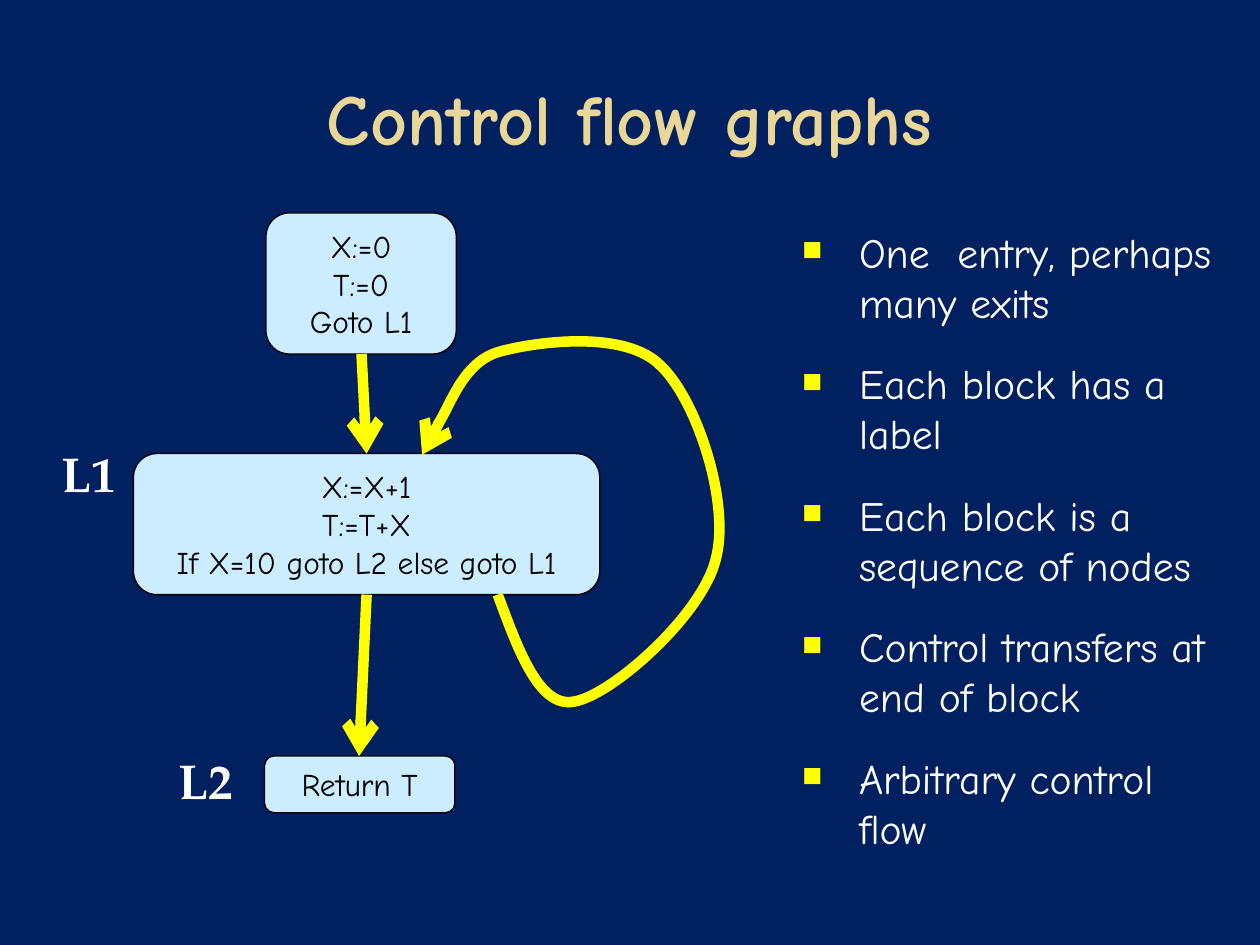
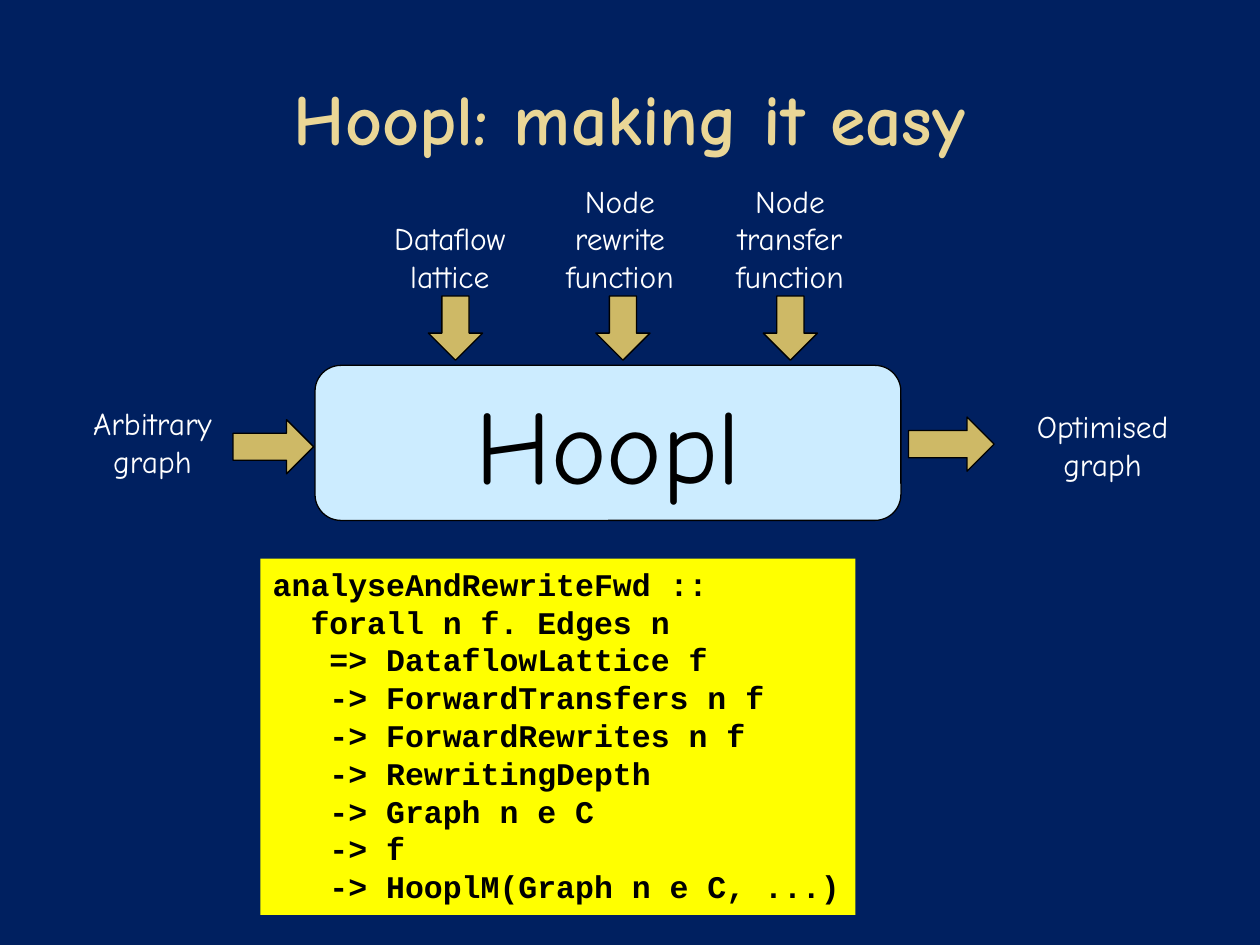
import pptx
import pptx.dml.color
import pptx.enum.shapes
import pptx.enum.text
import pptx.oxml.ns
import pptx.util
from lxml import etree

Pt = pptx.util.Pt
qn = pptx.oxml.ns.qn
SHAPE = pptx.enum.shapes.MSO_SHAPE
ALIGN = pptx.enum.text.PP_ALIGN
ANCHOR = pptx.enum.text.MSO_ANCHOR

COLORS = {"back": "002060", "title": "EAD696", "block": "CCECFF", "ink": "000000",
          "text": "FFFFFF", "bright": "FFFF00", "arrow": "CEB966"}
SANS, MONO, SERIF = "Comic Neue", "Courier New", "TeX Gyre Pagella"

FLOW_TITLE = "Control flow graphs"
FLOW_BLOCKS = [
    (["X:=0", "T:=0", "Goto L1"], (152, 121.7, 108.7, 80.6)),
    (["X:=X+1", "T:=T+X", "If X=10 goto L2 else goto L1"], (76.3, 259.2, 266.4, 80.6)),
    (["Return T"], (151.2, 432, 108.7, 32.4)),
]
FLOW_LABELS = [("L1", (28, 250, 46, 41)), ("L2", (95, 425.5, 46, 41))]
FLOW_ARROWS = [(206.6, 202.3, 209.5, 259.2), (209.5, 339.8, 205.2, 432)]
LOOP_START = (284.4, 339.8)
LOOP_CURVES = [
    [(295.2, 368.6), (307.4, 404.6), (327.6, 401)],
    [(348.5, 398.2), (401, 352.1), (409, 319.7)],
    [(417.6, 288), (398.2, 228.2), (377.3, 208.8)],
    [(357.1, 188.6), (307.4, 195.1), (285.8, 200.9)],
    [(264.2, 206.6), (256.3, 235.4), (249.1, 244.1)],
    [(242.6, 252), (242.6, 257.8), (241.2, 259.9)],
]
FLOW_POINTS = [
    "One  entry, perhaps many exits",
    "Each block has a label",
    "Each block is a sequence of nodes",
    "Control transfers at end of block",
    "Arbitrary control flow",
]

HOOPL_TITLE = "Hoopl: making it easy"
HOOPL_INPUTS = ["Dataflow lattice", "Node rewrite function", "Node transfer function"]
HOOPL_ENDS = [
    ("Arbitrary graph", (31.7, 227.5, 110.9, 51), (133.2, 239.8, 46, 31)),
    ("Optimised graph", (574.6, 229, 110.9, 51), (519.1, 238.3, 49, 31)),
]
SIGNATURE = [
    (0, "analyseAndRewriteFwd ::"),
    (2, "forall n f. Edges n"),
    (3, "=> DataflowLattice f"),
    (3, "-> ForwardTransfers n f"),
    (3, "-> ForwardRewrites n f"),
    (3, "-> RewritingDepth"),
    (3, "-> Graph n e C"),
    (3, "-> f"),
    (3, "-> HooplM(Graph n e C, ...)"),
]
CHAR_WIDTH = 10.8


def rgb(name):
    return pptx.dml.color.RGBColor.from_string(COLORS[name])


def write(sp, lines, size=18, font=SANS, color="text", bold=False, align=ALIGN.CENTER,
          anchor=ANCHOR.TOP, wrap=True, before=0, indents=None, bullet=None):
    tf = sp.text_frame
    tf.word_wrap = wrap
    tf.vertical_anchor = anchor
    for i, line in enumerate(lines):
        p = tf.paragraphs[0] if i == 0 else tf.add_paragraph()
        p.alignment = align
        p.space_before = Pt(before)
        r = p.add_run()
        r.text = line
        r.font.size, r.font.name, r.font.bold = Pt(size), font, bold
        r.font.color.rgb = rgb(color)
        pPr = p._p.get_or_add_pPr()
        if indents:
            pPr.set("marL", str(Pt(indents[i])))
        if bullet:
            pPr.set("indent", str(-Pt(32.4)))
            clr = etree.SubElement(pPr, qn("a:buClr"))
            etree.SubElement(clr, qn("a:srgbClr"), val=COLORS["bright"])
            etree.SubElement(pPr, qn("a:buSzPct"), val="80000")
            etree.SubElement(pPr, qn("a:buFont"), typeface=MONO)
            etree.SubElement(pPr, qn("a:buChar"), char=bullet)


def add_text(s, lines, box, **fmt):
    sp = s.shapes.add_textbox(*map(Pt, box))
    write(sp, lines, **fmt)


def add_shape(s, kind, box, fill, line="ink", rotation=0):
    sp = s.shapes.add_shape(kind, *map(Pt, box))
    sp.shadow.inherit = False
    sp.fill.solid()
    sp.fill.fore_color.rgb = rgb(fill)
    if line:
        sp.line.color.rgb = rgb(line)
        sp.line.width = Pt(0.75)
    else:
        sp.line.fill.background()
    sp.rotation = rotation
    return sp


def add_block(s, lines, box, size=18):
    sp = add_shape(s, SHAPE.ROUNDED_RECTANGLE, box, "block")
    write(sp, lines, size=size, color="ink", anchor=ANCHOR.MIDDLE, wrap=False)


def style_arrow(sp):
    sp.line.color.rgb = rgb("bright")
    sp.line.width = Pt(6)
    etree.SubElement(sp.line._get_or_add_ln(), qn("a:tailEnd"), type="arrow")


def add_arrow(s, x1, y1, x2, y2):
    sp = s.shapes.add_connector(pptx.enum.shapes.MSO_CONNECTOR.STRAIGHT,
                                Pt(x1), Pt(y1), Pt(x2), Pt(y2))
    style_arrow(sp)
    etree.SubElement(sp._element.spPr, qn("a:effectLst"))


def add_curve(s, start, curves):
    fb = s.shapes.build_freeform(Pt(start[0]), Pt(start[1]), scale=1.0)
    fb.add_line_segments([(Pt(x), Pt(y)) for curve in curves for x, y in curve], close=False)
    sp = fb.convert_to_shape()
    sp.shadow.inherit = False
    sp.fill.background()
    style_arrow(sp)
    outline = sp._element.find(".//" + qn("a:path"))
    segments = outline.findall(qn("a:lnTo"))
    for i in range(0, len(segments), 3):
        bezier = etree.SubElement(outline, qn("a:cubicBezTo"))
        for segment in segments[i:i + 3]:
            bezier.append(segment[0])
            outline.remove(segment)


def add_slide(prs, title):
    s = prs.slides.add_slide(prs.slide_layouts[6])
    s.background.fill.solid()
    s.background.fill.fore_color.rgb = rgb("back")
    add_text(s, [title], (36, 21.6, 648, 90), size=41, color="title", bold=True,
             anchor=ANCHOR.MIDDLE)
    return s


def build_flow(prs):
    s = add_slide(prs, FLOW_TITLE)
    for lines, box in FLOW_BLOCKS:
        add_block(s, lines, box)
    for ends in FLOW_ARROWS:
        add_arrow(s, *ends)
    for label, box in FLOW_LABELS:
        add_text(s, [label], box, size=28, font=SERIF, bold=True, align=ALIGN.LEFT, wrap=False)
    add_curve(s, LOOP_START, LOOP_CURVES)
    add_text(s, FLOW_POINTS, (440.6, 126, 262, 370.8), size=23.8, align=ALIGN.LEFT,
             before=18, indents=[43.2] * len(FLOW_POINTS), bullet="■")


def build_hoopl(prs):
    s = add_slide(prs, HOOPL_TITLE)
    add_block(s, ["Hoopl"], (180, 208.8, 334.8, 88.6), size=60)
    for label, box, arrow_box in HOOPL_ENDS:
        add_text(s, [label], box)
        add_shape(s, SHAPE.RIGHT_ARROW, arrow_box, "arrow")
    for i, label in enumerate(HOOPL_INPUTS):
        add_text(s, [label], (201.6 + 97.2 * i, 99.4, 110.9, 72.7), anchor=ANCHOR.BOTTOM)
        add_shape(s, SHAPE.RIGHT_ARROW, (241.9 + 95.7 * i, 172, 36.7, 31), "arrow", rotation=90)
    sp = add_shape(s, SHAPE.RECTANGLE, (148.8, 319.2, 340, 203.6), "bright", line=None)
    sp.text_frame.margin_right = 0
    write(sp, [line for _, line in SIGNATURE], font=MONO, color="ink", bold=True,
          align=ALIGN.LEFT, indents=[CHAR_WIDTH * n for n, _ in SIGNATURE])


def main():
    prs = pptx.Presentation()
    prs.slide_width, prs.slide_height = Pt(720), Pt(540)
    build_flow(prs)
    build_hoopl(prs)
    prs.save("out.pptx")


if __name__ == "__main__":
    main()
